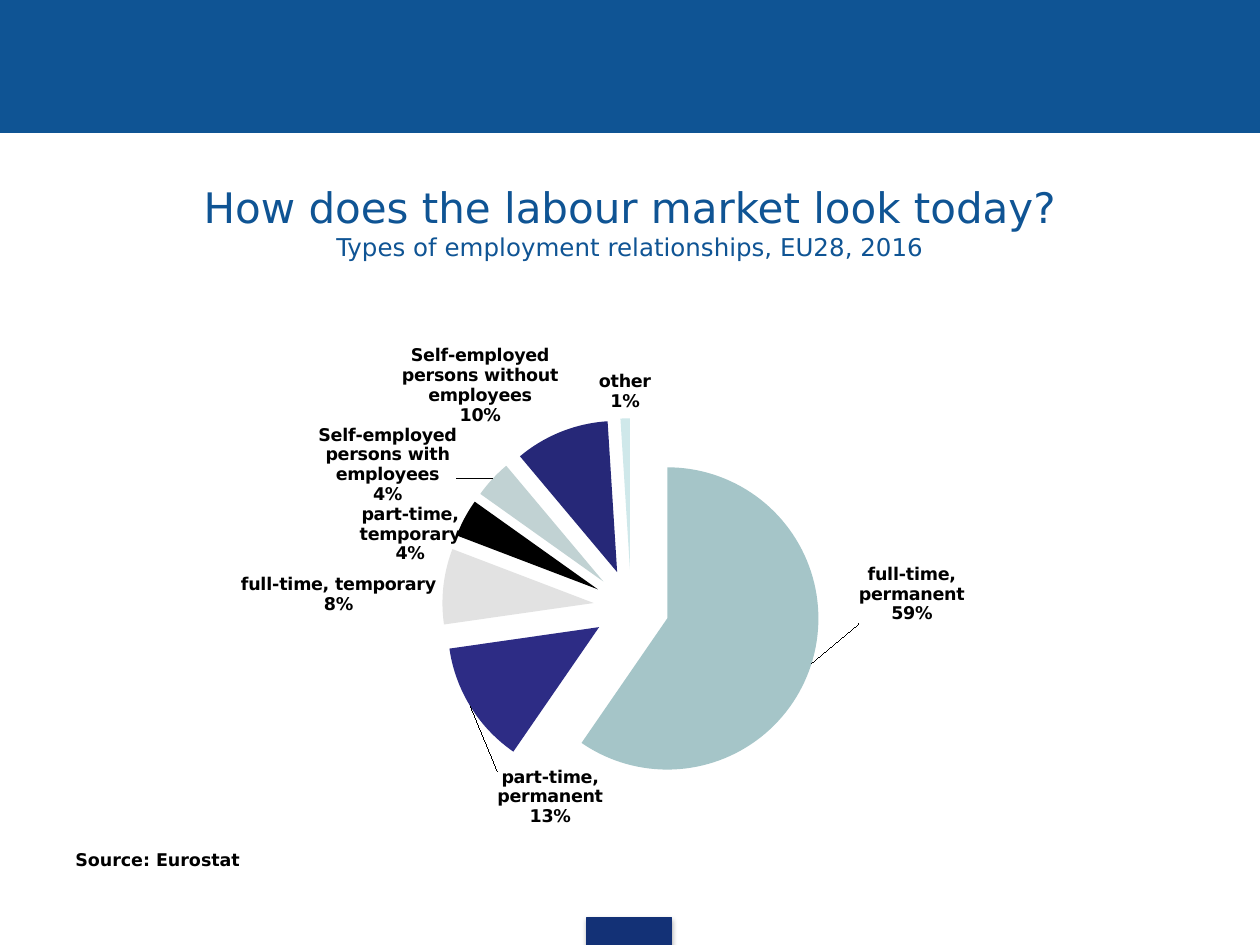
from pptx import Presentation
from pptx.chart.data import CategoryChartData
from pptx.dml.color import RGBColor
from pptx.enum.chart import XL_CHART_TYPE as ChartType
from pptx.enum.shapes import MSO_SHAPE as Shape
from pptx.enum.text import PP_ALIGN as Align
from pptx.oxml import parse_xml
from pptx.oxml.ns import nsdecls, qn
from pptx.util import Inches, Pt

FONT = "DejaVu Sans"
BLUE = RGBColor(0x0F, 0x54, 0x94)
NAVY = RGBColor(0x13, 0x31, 0x76)
BLACK = RGBColor(0, 0, 0)

# Category, share in percent, slice colour, label shift in inches
SLICES = [
    ("full-time, permanent", 59, RGBColor(0xA5, 0xC5, 0xC8), (0.32, -0.8)),
    ("part-time, permanent", 13, RGBColor(0x2D, 0x2C, 0x85), (1.1, 0.48)),
    ("full-time, temporary", 8, RGBColor(0xE2, 0xE2, 0xE2), (0, 0.23)),
    ("part-time, temporary", 4, BLACK, (0.02, 0.39)),
    ("Self-employed persons with employees", 4,
     RGBColor(0xC1, 0xD2, 0xD3), (-0.24, 0.24)),
    ("Self-employed persons without employees", 10,
     RGBColor(0x26, 0x28, 0x78), (0, 0)),
    ("other", 1, RGBColor(0xCF, 0xE8, 0xEA), (0, 0)),
]
# Fixed label sizes in inches, by slice
LABEL_SIZES = {2: (0.86, 0.5)}

LABEL_STYLE = f"""
<c:numFmt formatCode="0&quot;%&quot;" sourceLinked="0"/>
<c:spPr><a:noFill/><a:ln><a:noFill/></a:ln></c:spPr>
<c:txPr><a:bodyPr/><a:p><a:pPr><a:defRPr sz="1000" b="1">
  <a:solidFill><a:srgbClr val="{BLACK}"/></a:solidFill>
  <a:latin typeface="{FONT}"/>
</a:defRPr></a:pPr><a:endParaRPr lang="en-GB"/></a:p></c:txPr>
<c:dLblPos val="outEnd"/>
<c:showLegendKey val="0"/><c:showVal val="1"/><c:showCatName val="1"/>
<c:showSerName val="0"/><c:showPercent val="0"/><c:showBubbleSize val="0"/>
<c:separator>\n</c:separator>"""


def add_block(slide, box, color):
    sp = slide.shapes.add_shape(Shape.RECTANGLE, *map(Inches, box))
    sp.shadow.inherit = False
    sp.fill.solid()
    sp.fill.fore_color.rgb = color
    sp.line.color.rgb = color
    sp.line.width = Pt(0.75)
    return sp


def add_bands(slide):
    add_block(slide, (0, 0, 10, 1.05), BLUE)
    tab = add_block(slide, (4.66, 7.28, 0.67, 0.22), NAVY)
    # Soft shadow below the tab
    tab._element.spPr.find(qn("a:effectLst")).append(parse_xml(
        f'<a:outerShdw {nsdecls("a")} blurRad="{Pt(3.1)}" dist="{Pt(1.8)}" '
        'dir="5400000" rotWithShape="0"><a:srgbClr val="000000">'
        '<a:alpha val="35000"/></a:srgbClr></a:outerShdw>'))


def add_text(slide, box, lines, color, align=Align.LEFT, bold=False):
    """Place lines, given as (text, size) pairs, in the box."""
    tf = slide.shapes.add_textbox(*map(Inches, box)).text_frame
    tf.word_wrap = True
    for i, (text, size) in enumerate(lines):
        p = tf.add_paragraph() if i else tf.paragraphs[0]
        p.text = text
        p.alignment = align
        p.font.name = FONT
        p.font.size = Pt(size)
        p.font.bold = bold
        p.font.color.rgb = color


def label_xml(i, shift, width, height):
    """Label of slice i, moved by shift in a chart of the given size."""
    x, y = shift
    ext = ""
    if i in LABEL_SIZES:
        w, h = LABEL_SIZES[i]
        ext = ('<c:extLst><c:ext uri="{CE6537A1-D6FC-4f65-9D91-7224C49458BB}" '
               'xmlns:c15="http://schemas.microsoft.com/office/drawing/2012/chart">'
               f'<c15:layout><c:manualLayout><c:w val="{w / width}"/>'
               f'<c:h val="{h / height}"/></c:manualLayout></c15:layout>'
               '</c:ext></c:extLst>')
    return (f'<c:dLbl><c:idx val="{i}"/><c:layout><c:manualLayout>'
            f'<c:x val="{x / width}"/><c:y val="{y / height}"/>'
            f'</c:manualLayout></c:layout>{LABEL_STYLE}{ext}</c:dLbl>')


def add_pie(slide, box):
    data = CategoryChartData()
    data.categories = [name for name, *_ in SLICES]
    data.add_series("Series 1", [share for _, share, *_ in SLICES])
    chart = slide.shapes.add_chart(
        ChartType.PIE, *map(Inches, box), data).chart
    chart.has_legend = False
    chart.has_title = False
    chart.font.name = FONT
    chart.font.size = Pt(10)
    chart.font.color.rgb = BLACK
    plot = chart.plots[0]
    plot.vary_by_categories = True

    # Slice colours and gaps
    series = plot.series[0]
    for i, (_, _, color, _) in enumerate(SLICES):
        fmt = series.points[i].format
        fmt.fill.solid()
        fmt.fill.fore_color.rgb = color
        fmt.line.fill.background()
    ser = series._element
    ser.find(qn("c:dPt")).addprevious(
        parse_xml(f'<c:explosion {nsdecls("c")} val="25"/>'))

    # Labels with leader lines
    width, height = box[2:]
    labels = "".join(label_xml(i, s[3], width, height)
                     for i, s in enumerate(SLICES))
    ser.find(qn("c:cat")).addprevious(parse_xml(
        f'<c:dLbls {nsdecls("c", "a")}>{labels}{LABEL_STYLE}'
        '<c:showLeaderLines val="1"/></c:dLbls>'))

    # Square plot area, 3 inches wide
    area = chart._chartSpace.chart.plotArea
    for old in area.findall(qn("c:layout")):
        area.remove(old)
    area.insert(0, parse_xml(
        f'<c:layout {nsdecls("c")}><c:manualLayout>'
        '<c:layoutTarget val="inner"/>'
        '<c:xMode val="edge"/><c:yMode val="edge"/>'
        f'<c:x val="{2.44 / width}"/><c:y val="{0.75 / height}"/>'
        f'<c:w val="{3 / width}"/><c:h val="{3 / height}"/>'
        '</c:manualLayout></c:layout>'))


def main():
    prs = Presentation()
    prs.slide_width, prs.slide_height = Inches(10), Inches(7.5)
    slide = prs.slides.add_slide(prs.slide_layouts[6])
    add_bands(slide)
    add_text(slide, (0.5, 1.39, 9, 0.8),
             [("How does the labour market look today?", 24),
              ("Types of employment relationships, EU28, 2016", 14)],
             BLUE, Align.CENTER)
    add_pie(slide, (1.07, 2.57, 7.81, 3.99))
    add_text(slide, (0.5, 6.69, 9, 0.3), [("Source: Eurostat", 10)],
             BLACK, bold=True)
    prs.save("out.pptx")


if __name__ == "__main__":
    main()
